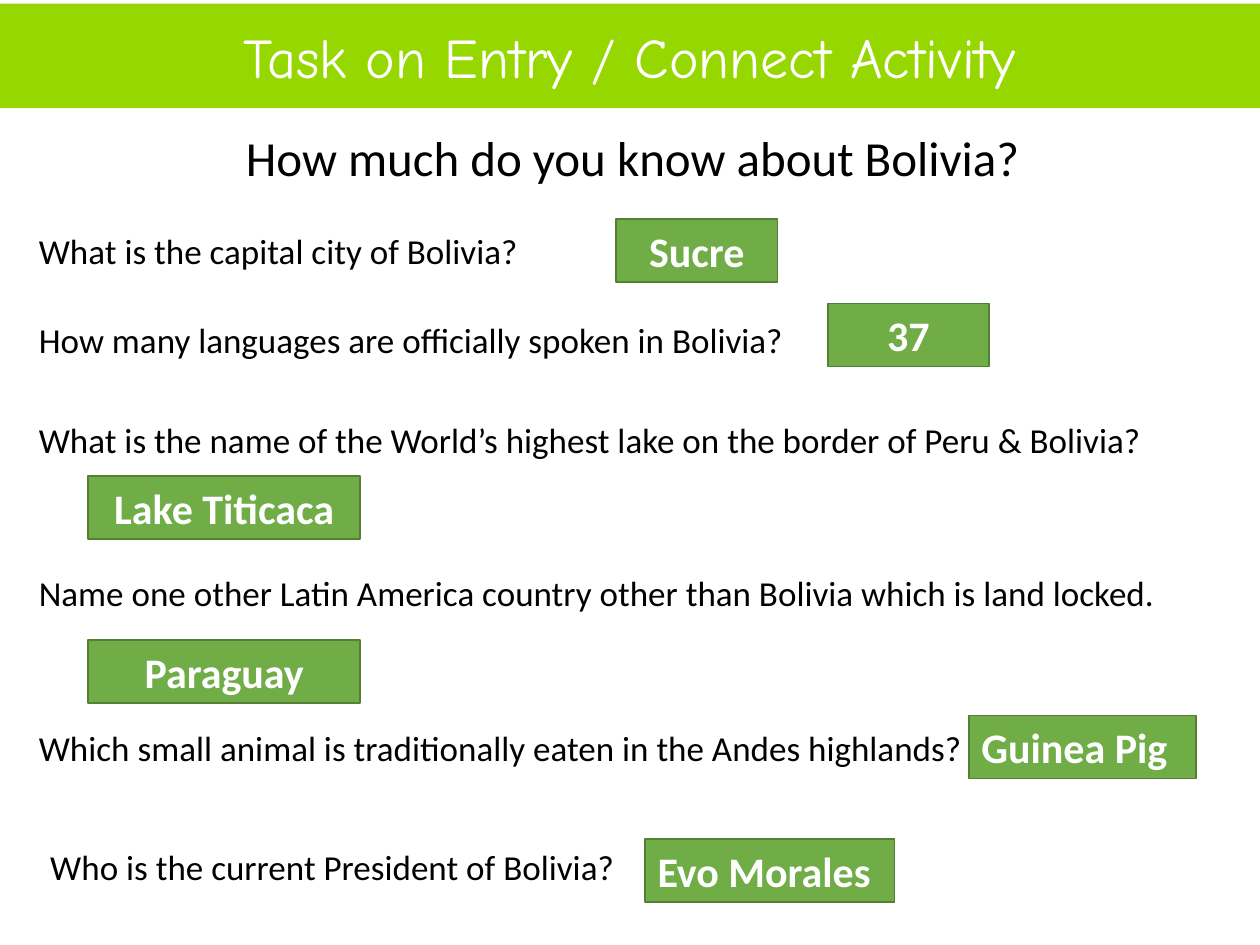
from pptx import Presentation
from pptx.dml.color import RGBColor
from pptx.enum.shapes import MSO_SHAPE
from pptx.enum.text import MSO_ANCHOR, PP_ALIGN
from pptx.util import Inches, Pt

RECTANGLE = MSO_SHAPE.RECTANGLE
LEFT, CENTER = PP_ALIGN.LEFT, PP_ALIGN.CENTER
TOP, MIDDLE = MSO_ANCHOR.TOP, MSO_ANCHOR.MIDDLE


def color(hex_value):
    return RGBColor.from_string(hex_value)


class QuizSlide:
    body_font = "Calibri"
    title_font = "Comic Neue"
    band_fill = "97D700"
    answer_fill = "70AD47"
    answer_border = "538035"
    dark = "000000"
    light = "FFFFFF"

    def __init__(self, slide):
        self.slide = slide

    def set_wording(self, shape, wording, size, hex_value, align,
                    anchor=TOP, font=body_font, bold=False):
        frame = shape.text_frame
        frame.word_wrap = True
        frame.vertical_anchor = anchor
        frame.text = wording
        paragraph = frame.paragraphs[0]
        paragraph.alignment = align
        run_font = paragraph.runs[0].font
        run_font.name = font
        run_font.size = Pt(size)
        run_font.bold = bold
        run_font.color.rgb = color(hex_value)

    def rectangle(self, left, top, width, height, fill):
        shape = self.slide.shapes.add_shape(
            RECTANGLE, Inches(left), Inches(top), Inches(width), Inches(height))
        shape.shadow.inherit = False
        shape.fill.solid()
        shape.fill.fore_color.rgb = color(fill)
        return shape

    def title_band(self, wording):
        band = self.rectangle(0, 0.03, 10, 0.83, self.band_fill)
        band.line.fill.background()
        self.set_wording(band, wording, 32, self.light, CENTER, MIDDLE, self.title_font)

    def text(self, wording, left, top, width, height, size=20, align=LEFT):
        box = self.slide.shapes.add_textbox(
            Inches(left), Inches(top), Inches(width), Inches(height))
        self.set_wording(box, wording, size, self.dark, align)

    def answer(self, wording, left, top, width, align=CENTER):
        box = self.rectangle(left, top, width, 0.5, self.answer_fill)
        box.line.color.rgb = color(self.answer_border)
        box.line.width = Pt(1)
        self.set_wording(box, wording, 24, self.light, align, bold=True)


def main():
    presentation = Presentation()
    presentation.slide_width = Inches(10)
    presentation.slide_height = Inches(7.5)
    quiz = QuizSlide(presentation.slides.add_slide(presentation.slide_layouts[6]))

    quiz.title_band("Task on Entry / Connect Activity")
    quiz.text("How much do you know about Bolivia?", 0.54, 0.96, 8.96, 0.57, 28, CENTER)

    questions = [
        ("What is the capital city of Bolivia?", 0.21, 1.77, 4.62),
        ("How many languages are officially spoken in Bolivia?", 0.21, 2.48, 9.41),
        ("What is the name of the World’s highest lake on the border of Peru & Bolivia?",
         0.21, 3.27, 9.17),
        ("Name one other Latin America country other than Bolivia which is land locked.",
         0.21, 4.49, 9.41),
        ("Which small animal is traditionally eaten in the Andes highlands?", 0.21, 5.72, 9.41),
        ("Who is the current President of Bolivia?", 0.3, 6.66, 4.82),
    ]
    for question, left, top, width in questions:
        quiz.text(question, left, top, width, 0.44)

    answers = [
        ("Sucre", 4.89, 1.74, 1.28, CENTER),
        ("37", 6.57, 2.41, 1.28, CENTER),
        ("Lake Titicaca", 0.7, 3.78, 2.16, CENTER),
        ("Paraguay", 0.7, 5.08, 2.16, CENTER),
        ("Guinea Pig", 7.69, 5.68, 1.8, LEFT),
        ("Evo Morales", 5.12, 6.66, 1.98, LEFT),
    ]
    for answer in answers:
        quiz.answer(*answer)

    presentation.save("out.pptx")


if __name__ == "__main__":
    main()
